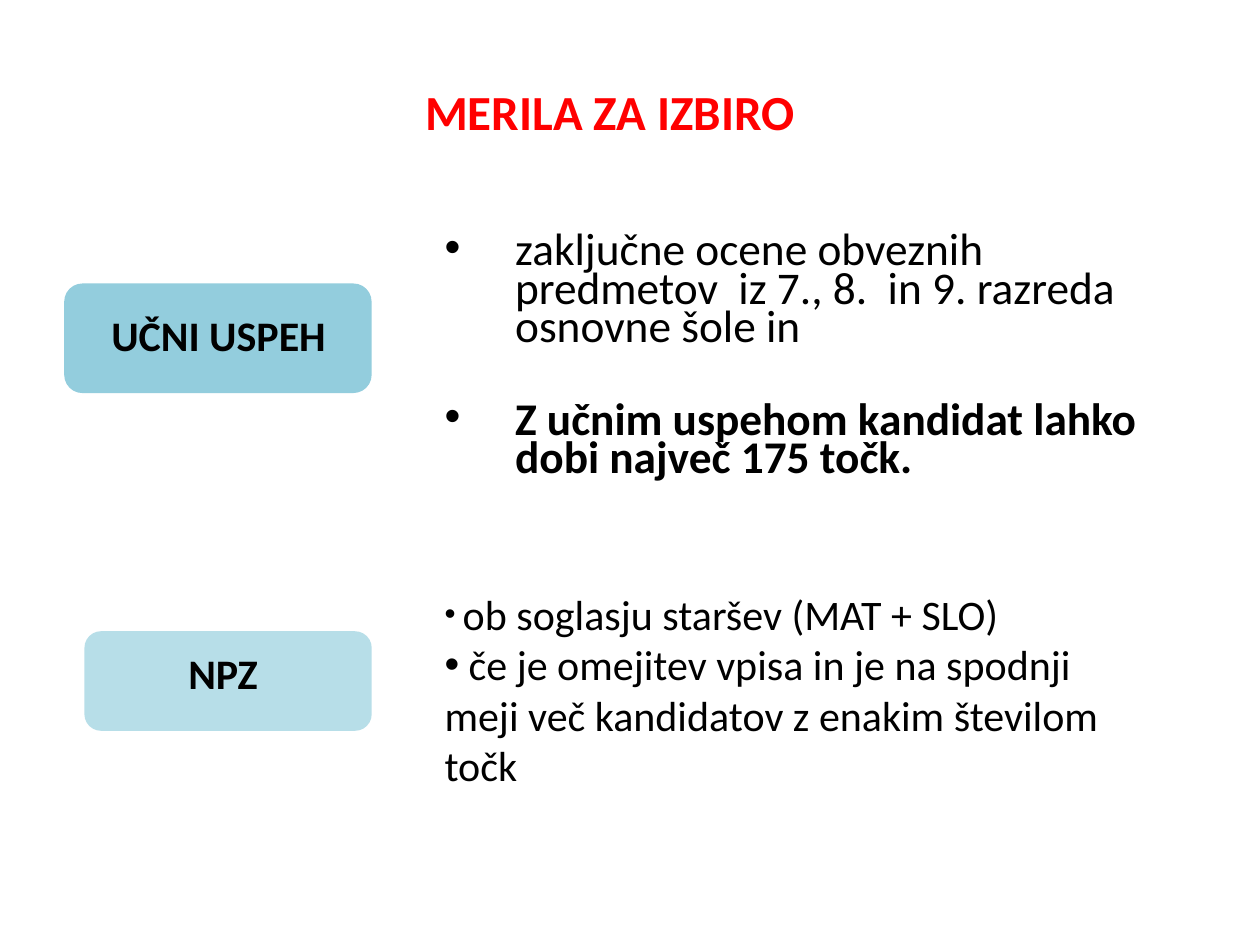
from pptx import Presentation
from pptx.dml.color import RGBColor
from pptx.enum.shapes import MSO_SHAPE as Shape
from pptx.enum.text import MSO_ANCHOR as Anchor, MSO_AUTO_SIZE as AutoSize, PP_ALIGN as Align
from pptx.oxml.xmlchemy import OxmlElement
from pptx.util import Inches, Pt

COLORS = {"title": "FF0000", "text": "000000", "grades": "93CDDD", "exam": "B7DEE8"}


class SlideBuilder:
    font = "Calibri"

    def __init__(self, slide):
        self.slide = slide

    def style(self, font, size, color="text", bold=False):
        font.name, font.size, font.bold = self.font, Pt(size), bold
        font.color.rgb = RGBColor.from_string(COLORS[color])

    def title(self, text, left, top, width, height):
        sp = self.slide.shapes.title
        sp.left, sp.top, sp.width, sp.height = map(Inches, (left, top, width, height))
        tf = sp.text_frame
        tf.text = text
        tf.vertical_anchor = Anchor.TOP
        tf.auto_size = AutoSize.SHAPE_TO_FIT_TEXT
        p = tf.paragraphs[0]
        p.alignment = Align.CENTER
        self.style(p.font, 28, "title", True)

    def box(self, color, left, top, width, height):
        sp = self.slide.shapes.add_shape(
            Shape.ROUNDED_RECTANGLE, *map(Inches, (left, top, width, height)))
        sp.shadow.inherit = False
        sp.fill.solid()
        sp.fill.fore_color.rgb = RGBColor.from_string(COLORS[color])
        sp.line.fill.background()

    def text_frame(self, left, top, width, height):
        sp = self.slide.shapes.add_textbox(*map(Inches, (left, top, width, height)))
        sp.text_frame.word_wrap = True
        return sp.text_frame

    def label(self, text, *place):
        tf = self.text_frame(*place)
        tf.auto_size = AutoSize.SHAPE_TO_FIT_TEXT
        p = tf.paragraphs[0]
        p.text = text
        p.alignment = Align.CENTER
        self.style(p.font, 24, bold=True)

    def bullet(self, p, indent=0):
        pPr = p._p.get_or_add_pPr()
        pPr.set("marL", str(Inches(indent)))
        pPr.set("indent", str(-Inches(indent)))
        font = OxmlElement("a:buFont")
        font.set("typeface", "Arial")
        char = OxmlElement("a:buChar")
        char.set("char", "•")
        pPr.extend([font, char])

    def bullets(self, items, *place, indent=0, line_spacing=None):
        tf = self.text_frame(*place)
        for i, (runs, space_before) in enumerate(items):
            p = tf.paragraphs[0] if i == 0 else tf.add_paragraph()
            p.line_spacing = line_spacing
            p.space_before = Pt(space_before)
            self.bullet(p, indent)
            for text, size, bold in runs:
                r = p.add_run()
                r.text = text
                self.style(r.font, size, bold=bold)


def main():
    prs = Presentation()
    prs.slide_width, prs.slide_height = Inches(10), Inches(7.5)
    s = SlideBuilder(prs.slides.add_slide(prs.slide_layouts[5]))

    s.title("MERILA ZA IZBIRO", 2.24, 0.6, 5.2, 0.57)
    s.box("exam", 0.67, 5.01, 2.28, 0.79)
    s.box("grades", 0.51, 2.25, 2.44, 0.87)
    s.label("UČNI USPEH", 0.75, 2.41, 1.97, 0.5)
    s.label("NPZ", 0, 5.09, 3.54, 0.5)

    s.bullets([
        ([("zaključne ocene obveznih predmetov  iz 7., 8.  in 9. razreda osnovne šole in",
           25.9, False)], 5),
        ([("Z učnim uspehom kandidat lahko dobi največ 175 točk.", 25.9, True)], 31.5),
    ], 3.43, 1.82, 5.75, 2.32, indent=0.56, line_spacing=0.7)
    s.bullets([
        ([(" ", 18, False), ("ob soglasju staršev (MAT + SLO)", 24, False)], 0),
        ([(" če je omejitev vpisa in je na spodnji meji več kandidatov z enakim številom točk",
           24, False)], 0),
    ], 3.43, 4.62, 5.75, 1.72)

    prs.save("out.pptx")


if __name__ == "__main__":
    main()
